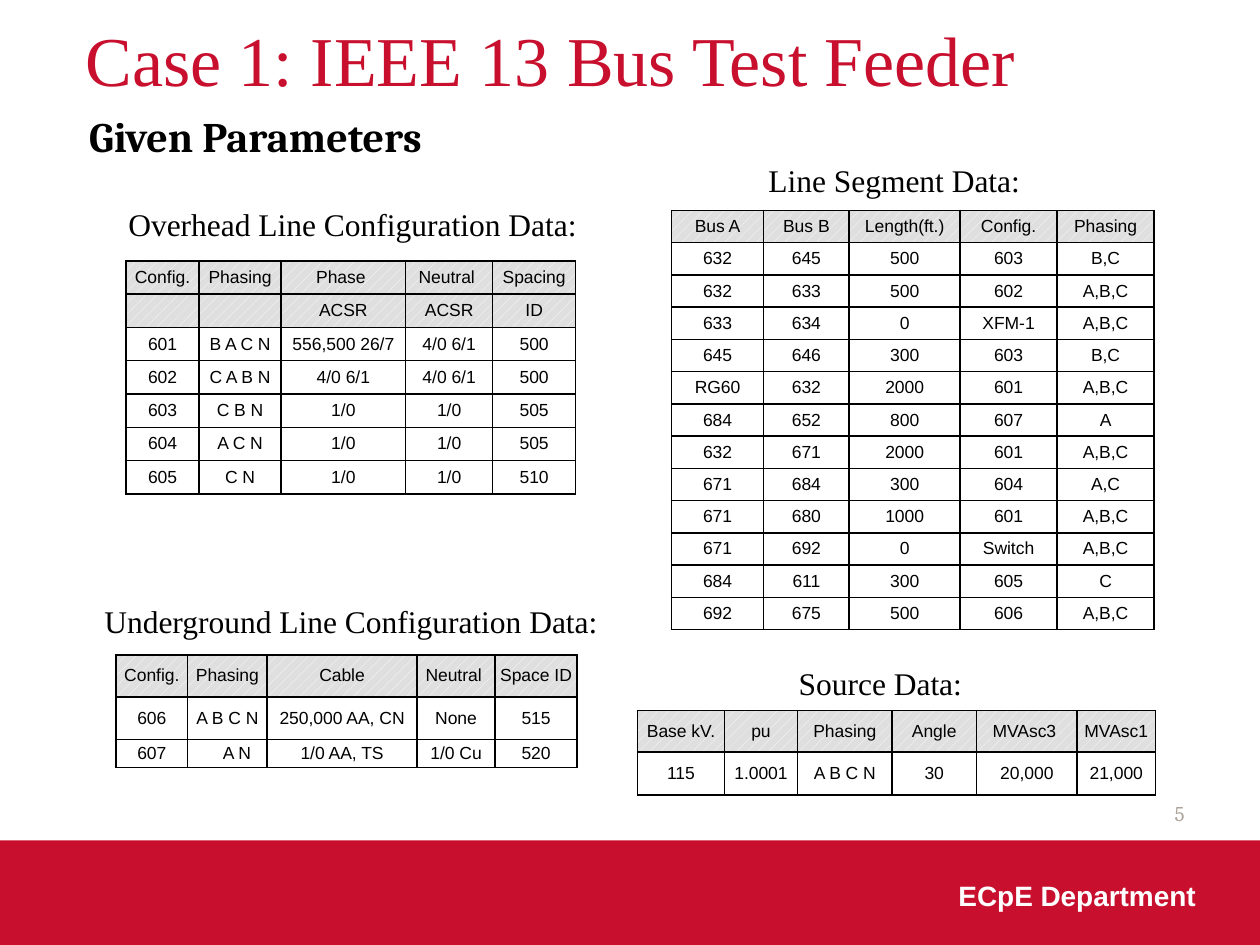
import pptx
import pptx.dml.color
import pptx.enum.dml
import pptx.enum.shapes
import pptx.enum.text
import pptx.oxml
import pptx.oxml.ns
import pptx.util
from pptx.util import Inches

ALIGN = pptx.enum.text.PP_ALIGN
ANCHOR = pptx.enum.text.MSO_ANCHOR


def color(value):
    return pptx.dml.color.RGBColor.from_string(value)


def write(frame, text, size, font_name, text_color, align=ALIGN.LEFT, bold=False):
    frame.text = text
    paragraph = frame.paragraphs[0]
    paragraph.alignment = align
    paragraph.font.size = pptx.util.Pt(size)
    paragraph.font.name = font_name
    paragraph.font.bold = bold
    paragraph.font.color.rgb = color(text_color)


presentation = pptx.Presentation()
presentation.slide_width = Inches(10)
presentation.slide_height = Inches(7.5)
slide = presentation.slides.add_slide(presentation.slide_layouts[5])

title = slide.shapes.title
title.left, title.top = Inches(0.58), Inches(0.08)
title.width, title.height = Inches(8.22), Inches(0.77)
title.text_frame.vertical_anchor = ANCHOR.MIDDLE
title.text_frame.auto_size = pptx.enum.text.MSO_AUTO_SIZE.NONE
write(title.text_frame, "Case 1: IEEE 13 Bus Test Feeder", 40, "Times New Roman", "C8102E")

band = slide.shapes.add_shape(
    pptx.enum.shapes.MSO_SHAPE.RECTANGLE, 0, Inches(6.67), Inches(10), Inches(0.83))
band.shadow.inherit = False
band.fill.solid()
band.fill.fore_color.rgb = color("C8102E")
band.line.fill.background()

heading = (18, "Times New Roman", "000000")
labels = [
    ("5", (7.17, 6.25, 2.33, 0.4), ANCHOR.MIDDLE, (12, "Cambria", "ACA39A", ALIGN.RIGHT)),
    ("ECpE Department", (6.92, 6.92, 2.67, 0.42), ANCHOR.TOP,
     (16, "Arial", "FFFFFF", ALIGN.RIGHT, True)),
    ("Given Parameters", (0.61, 0.83, 2.89, 0.5), ANCHOR.TOP,
     (24, "Cambria", "000000", ALIGN.LEFT, True)),
    ("Overhead Line Configuration Data:", (0.92, 1.58, 4.08, 0.4), ANCHOR.MIDDLE, heading),
    ("Underground Line Configuration Data:", (0.73, 4.73, 4.27, 0.4), ANCHOR.MIDDLE, heading),
    ("Line Segment Data:", (6, 1.23, 3.33, 0.4), ANCHOR.MIDDLE, heading),
    ("Source Data:", (6.24, 5.22, 1.86, 0.4), ANCHOR.MIDDLE, heading),
]
for text, box, anchor, style in labels:
    frame = slide.shapes.add_textbox(*map(Inches, box)).text_frame
    frame.word_wrap = True
    frame.vertical_anchor = anchor
    write(frame, text, *style)

overhead = """Config.|Phasing|Phase |Neutral |Spacing
||ACSR|ACSR|ID
601|B A C N|556,500 26/7|4/0 6/1|500
602|C A B N|4/0 6/1|4/0 6/1|500
603|C B N|1/0|1/0|505
604|A C N|1/0|1/0|505
605|C N|1/0|1/0|510"""
underground = """Config.|Phasing|Cable|Neutral |Space ID
606|A B C N|250,000 AA, CN|None|515
607|A N|1/0 AA, TS|1/0 Cu|520"""
segments = """Bus A|Bus B|Length(ft.)|Config.|Phasing
632|645|500|603|B,C
632|633|500|602|A,B,C
633|634|0|XFM-1|A,B,C
645|646|300|603|B,C
RG60|632|2000|601|A,B,C
684|652|800|607|A
632|671|2000|601|A,B,C
671|684|300|604|A,C
671|680|1000|601|A,B,C
671|692|0|Switch|A,B,C
684|611|300|605|C
692|675|500|606|A,B,C"""
source = """Base kV.|pu|Phasing|Angle|MVAsc3 |MVAsc1
115|1.0001|A B C N|30|20,000|21,000"""

tables = [
    (overhead, 1, 2.07, [0.58, 0.65, 0.99, 0.69, 0.66], [1.85 / 7] * 7, 2),
    (underground, 0.92, 5.2, [0.57, 0.63, 1.19, 0.62, 0.65], [0.33, 0.34, 0.22], 1),
    (segments, 5.33, 1.67, [0.73, 0.68, 0.88, 0.77, 0.77], [3.33 / 13] * 13, 1),
    (source, 5.06, 5.64, [0.69, 0.58, 0.75, 0.67, 0.8, 0.62], [0.33, 0.34], 1),
]
for content, left, top, widths, heights, header_rows in tables:
    table = slide.shapes.add_table(
        len(heights), len(widths), Inches(left), Inches(top),
        Inches(sum(widths)), Inches(sum(heights))).table
    for column, width in zip(table.columns, widths):
        column.width = Inches(width)
    for row, height in zip(table.rows, heights):
        row.height = Inches(height)
    for row_index, line in enumerate(content.split("\n")):
        for column_index, text in enumerate(line.split("|")):
            cell = table.cell(row_index, column_index)
            cell.margin_left = cell.margin_right = Inches(0.02)
            cell.margin_top = cell.margin_bottom = 0
            cell.vertical_anchor = ANCHOR.MIDDLE
            write(cell.text_frame, text, 10, "Arial", "000000", ALIGN.CENTER)
            if not text:
                paragraph = cell.text_frame.paragraphs[0]
                paragraph._p.append(pptx.oxml.parse_xml(
                    f'<a:endParaRPr {pptx.oxml.ns.nsdecls("a")} sz="1000"/>'))
            properties = cell._tc.get_or_add_tcPr()
            for side in ("lnL", "lnR", "lnT", "lnB"):
                properties.append(pptx.oxml.parse_xml(
                    f'<a:{side} {pptx.oxml.ns.nsdecls("a")} w="12700"><a:solidFill>'
                    f'<a:srgbClr val="000000"/></a:solidFill></a:{side}>'))
            if row_index < header_rows:
                cell.fill.patterned()
                cell.fill.pattern = pptx.enum.dml.MSO_PATTERN.PERCENT_20
                cell.fill.fore_color.rgb = color("FFFFFF")
                cell.fill.back_color.rgb = color("DFDFDF")
            else:
                cell.fill.background()
            if content == underground and text == "A N":
                cell.margin_left = Inches(0.17)

presentation.save("out.pptx")
